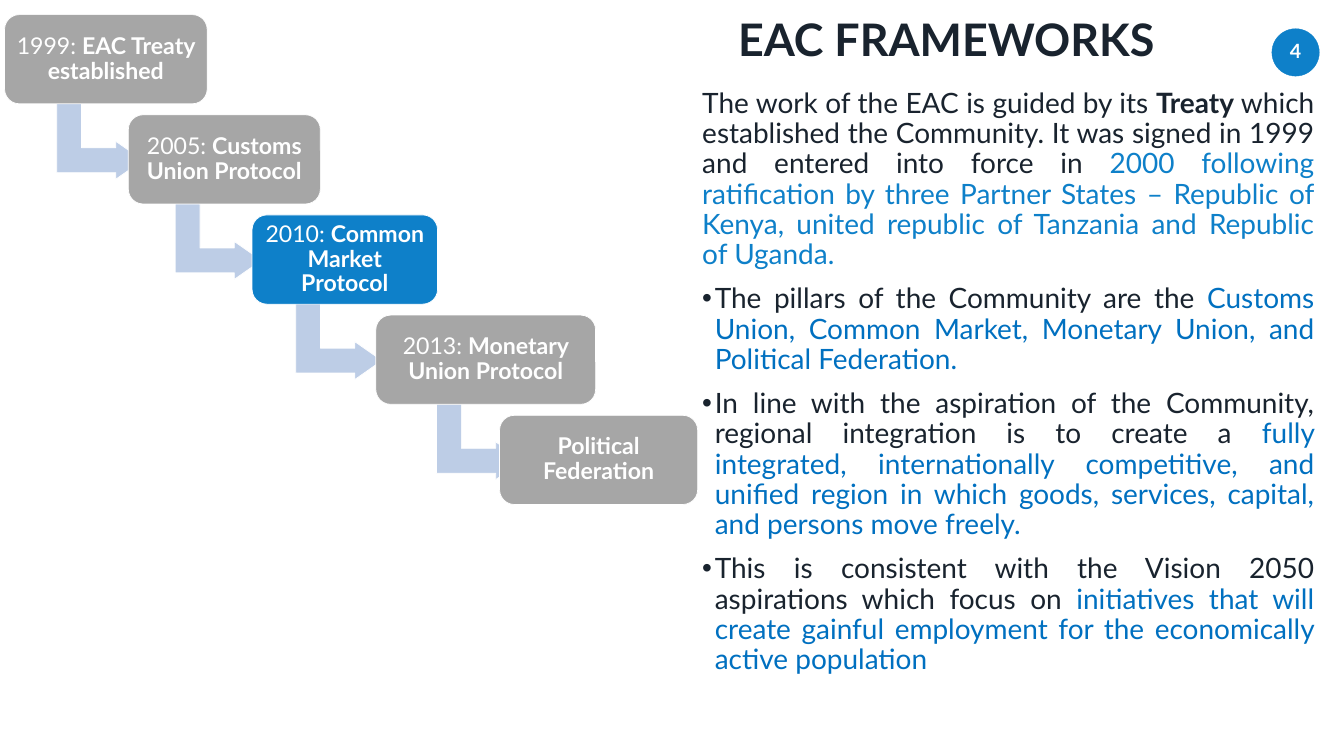
from lxml import etree
from pptx import Presentation
from pptx.dml.color import RGBColor
from pptx.enum.shapes import MSO_SHAPE
from pptx.enum.text import MSO_ANCHOR, MSO_AUTO_SIZE, PP_ALIGN
from pptx.oxml.ns import qn
from pptx.util import Inches, Pt

OVAL = MSO_SHAPE.OVAL
ARROW = MSO_SHAPE.BENT_UP_ARROW
ROUND = MSO_SHAPE.ROUNDED_RECTANGLE
TOP, MIDDLE = MSO_ANCHOR.TOP, MSO_ANCHOR.MIDDLE
LEFT, CENTER, JUSTIFY = PP_ALIGN.LEFT, PP_ALIGN.CENTER, PP_ALIGN.JUSTIFY
FIXED = MSO_AUTO_SIZE.NONE
DARK, BLUE, LINK = "19232E", "0E80C9", "0070C0"
GRAY, PALE, WHITE = "A6A6A6", "BDCDE6", "FFFFFF"


def add_run(par, text, size, color, bold=False):
    run = par.add_run()
    run.text = text
    run.font.name = "Lato"
    run.font.size = Pt(size)
    run.font.bold = bold
    run.font.color.rgb = RGBColor.from_string(color)


def add_box(kind, left, top, width, height, fill, line, weight):
    box = slide.shapes.add_shape(
        kind, Inches(left), Inches(top), Inches(width), Inches(height))
    box.shadow.inherit = False
    box.fill.solid()
    box.fill.fore_color.rgb = RGBColor.from_string(fill)
    box.line.color.rgb = RGBColor.from_string(line)
    box.line.width = Pt(weight)
    return box


deck = Presentation()
deck.slide_width, deck.slide_height = Inches(26.66), Inches(15)
slide = deck.slides.add_slide(deck.slide_layouts[1])

badge = add_box(OVAL, 25.23, 0.57, 0.94, 0.94, BLUE, BLUE, 0.5)
frame = badge.text_frame
frame.word_wrap = False
frame.margin_left = frame.margin_right = frame.margin_top = 0
frame.margin_bottom = Inches(0.08)
frame.vertical_anchor = MIDDLE
par = frame.paragraphs[0]
par.alignment = CENTER
add_run(par, "4", 28, WHITE, True)

title = slide.shapes.title
title.left, title.top = Inches(14.54), Inches(0.3)
title.width, title.height = Inches(11.38), Inches(1.43)
frame = title.text_frame
frame.auto_size = FIXED
frame.vertical_anchor = TOP
par = frame.paragraphs[0]
par.alignment = LEFT
par.line_spacing = 0.9
par.space_after = Pt(6)
add_run(par, "EAC FRAMEWORKS", 64, DARK, True)

points = [
    [("The work of the EAC is guided by its ", DARK, False),
     ("Treaty", DARK, True),
     (" which established the Community. It was signed in 1999 and entered "
      "into force in ", DARK, False),
     ("2000 following ratification by three Partner States – Republic of "
      "Kenya, united republic of Tanzania and Republic of Uganda. ", BLUE, False)],
    [("The pillars of the Community are the ", DARK, False),
     ("Customs Union, Common Market, Monetary Union, and Political "
      "Federation. ", LINK, False)],
    [("In line with the aspiration of the Community, regional integration is "
      "to create a ", DARK, False),
     ("fully integrated, internationally competitive, and unified region in "
      "which goods, services, capital, and persons move freely. ", LINK, False)],
    [("This is consistent with the Vision 2050 aspirations which focus on ",
      DARK, False),
     ("initiatives that will create gainful employment for the economically "
      "active population", LINK, False)],
]
body = slide.placeholders[1]
body.left, body.top = Inches(13.33), Inches(1.72)
body.width, body.height = Inches(12.84), Inches(12.8)
frame = body.text_frame
frame.auto_size = FIXED
frame.vertical_anchor = TOP
for i, point in enumerate(points):
    par = frame.add_paragraph() if i else frame.paragraphs[0]
    par.alignment = JUSTIFY
    par.line_spacing = 0.9
    par.space_before = Pt(20)
    props = par._p.get_or_add_pPr()
    props.set("marL", str(Inches(0.75 if i else 0.5)))
    props.set("indent", str(Inches(-0.25 if i else 0)))
    if i:
        etree.SubElement(props, qn("a:buFont")).set("typeface", "Arial")
        etree.SubElement(props, qn("a:buChar")).set("char", "•")
    else:
        etree.SubElement(props, qn("a:buNone"))
    for text, color, bold in point:
        add_run(par, text, 40, color, bold)

steps = [
    ("1999: ", "EAC Treaty established", 4.02, GRAY),
    ("2005: ", "Customs Union Protocol", 3.81, GRAY),
    ("2010: ", "Common Market Protocol", 3.68, BLUE),
    ("2013: ", "Monetary Union Protocol", 4.36, GRAY),
    ("", "Political Federation", 3.93, GRAY),
]
for i, (year, name, width, fill) in enumerate(steps):
    left, top = 0.09 + 2.455 * i, 0.29 + 1.9875 * i
    if i < len(steps) - 1:
        arrow = add_box(ARROW, left + width / 2 - 0.87, top + 1.66,
                        1.5, 1.71, PALE, WHITE, 1)
        arrow.rotation = 90
        for j, value in enumerate((0.328, 0.25, 0.358)):
            arrow.adjustments[j] = value
    box = add_box(ROUND, left, top, width, 1.77, fill, WHITE, 1)
    frame = box.text_frame
    frame.word_wrap = True
    frame.vertical_anchor = MIDDLE
    frame.margin_left = frame.margin_right = Inches(0.14)
    frame.margin_top = frame.margin_bottom = Inches(0.14)
    par = frame.paragraphs[0]
    par.alignment = CENTER
    par.line_spacing = 0.9
    if year:
        add_run(par, year, 33, WHITE)
    add_run(par, name, 33, WHITE, True)

deck.save("out.pptx")
